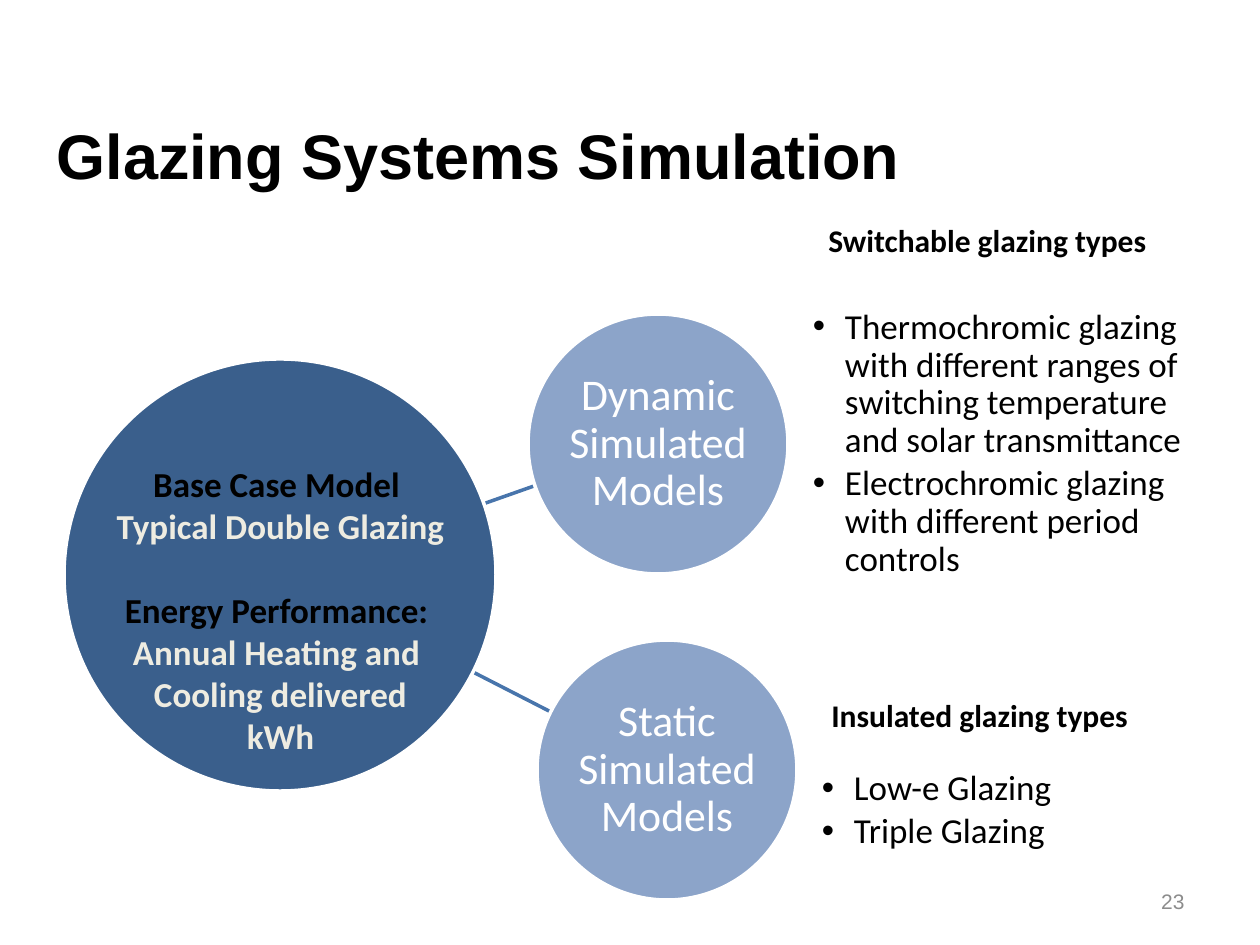
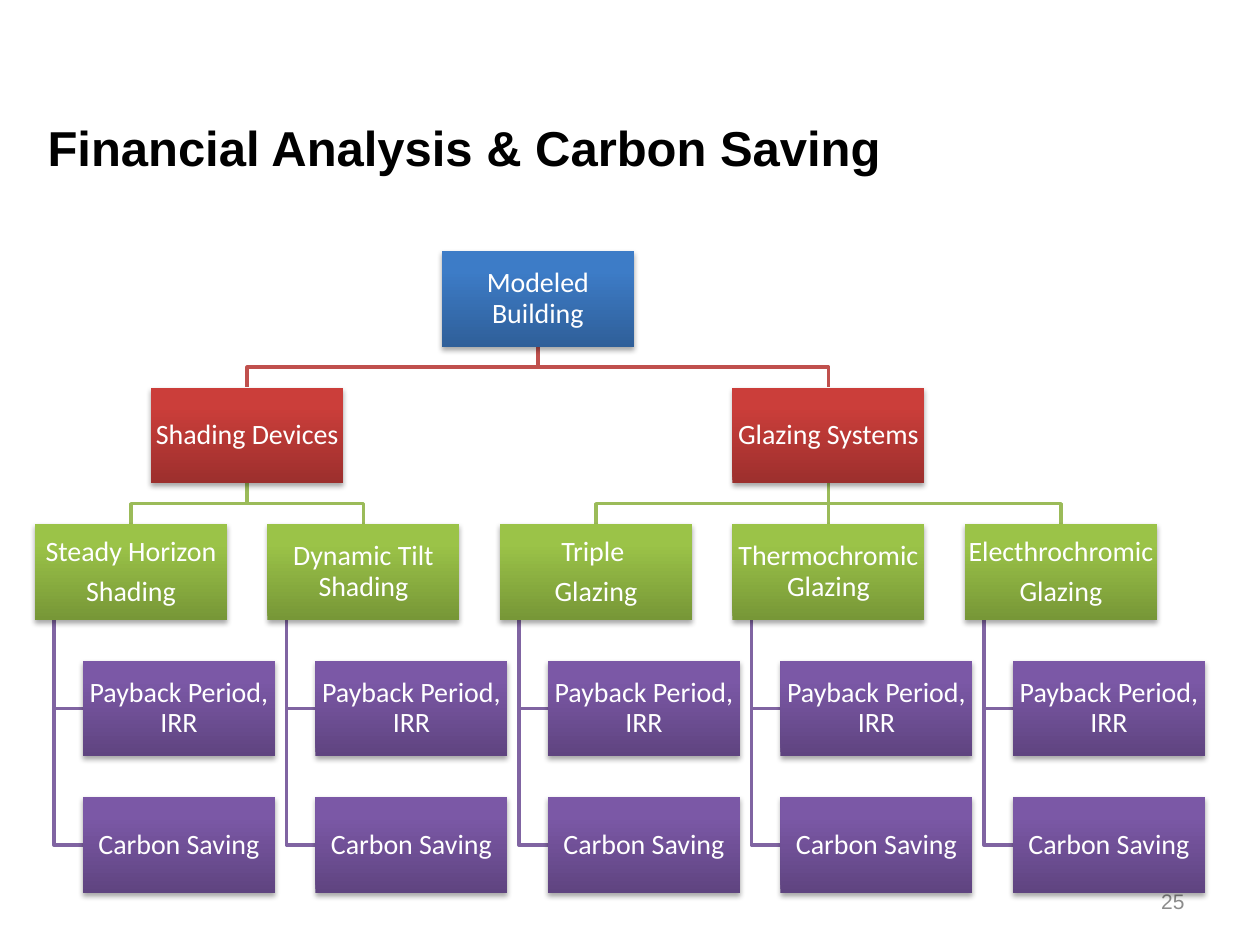
"""Builds two slides: glazing simulation models and the financial analysis tree."""
from dataclasses import dataclass

from pptx import Presentation
from pptx.dml.color import RGBColor
from pptx.enum.shapes import MSO_CONNECTOR, MSO_SHAPE
from pptx.enum.text import MSO_ANCHOR, MSO_AUTO_SIZE, PP_ALIGN
from pptx.oxml.ns import qn
from pptx.oxml.xmlchemy import OxmlElement
from pptx.util import Emu, Pt


@dataclass(frozen=True)
class Theme:
    head: str = "Arial"
    body: str = "Calibri"
    black: str = "000000"
    white: str = "FFFFFF"
    cream: str = "EEECE1"
    grey: str = "8C8C8C"
    base: str = "3A5F8C"
    model: str = "8CA4C9"
    spoke: str = "4875AC"
    line: int = 2
    title_size: int = 36
    subtitle_size: int = 28
    circle_size: int = 25
    list_size: int = 20
    heading_size: int = 18
    card_size: int = 16
    number_size: int = 12


T = Theme()
GRADIENTS = {
    "root": ("2F5F99", "3D7CC7"),
    "group": ("9C2F2D", "CB3E3A"),
    "option": ("779737", "9BC348"),
    "result": ("5F4480", "7B58A6"),
}
LINKS = {"group": "C0504D", "option": "9BBB59", "result": "8064A2"}

GLAZING = {
    "title": "Glazing Systems Simulation",
    "number": "23",
    "base": [
        ("Base Case Model ", {"color": T.black}),
        ("Typical Double Glazing", {}),
        ("Energy Performance: ", {"color": T.black, "before": 24}),
        ("Annual Heating and ", {}),
        ("Cooling delivered", {}),
        ("kWh", {}),
    ],
    "models": [
        {
            "name": "Dynamic Simulated Models",
            "circle": (528, 314, 260, 260),
            "spoke": [(432, 522), (534, 486)],
            "heading": ("Switchable glazing types", (816, 215, 367, 50)),
            "list": (813, 314, 388, 260),
            "types": [
                "Thermochromic glazing with different ranges of "
                "switching temperature and solar transmittance",
                "Electrochromic glazing with different period controls",
            ],
        },
        {
            "name": "Static Simulated Models",
            "circle": (537, 640, 260, 260),
            "spoke": [(432, 651), (551, 712)],
            "heading": ("Insulated glazing types", (819, 690, 338, 50)),
            "list": (822, 722, 388, 178),
            "types": ["Low-e Glazing", "Triple Glazing"],
        },
    ],
}
FINANCE = {
    "title": "Financial Analysis & Carbon Saving",
    "number": "25",
    "root": "Modeled Building",
    "groups": [
        ("Shading Devices", ["Steady Horizon\nShading", "Dynamic Tilt Shading"]),
        ("Glazing Systems", ["Triple \nGlazing", "Thermochromic Glazing",
                             "Electhrochromic \nGlazing"]),
    ],
    "results": ["Payback Period, IRR", "Carbon Saving"],
}

TITLE_BOX = (44, 105, 1111, 110)
SUBTITLE_BOX = (35, 106, 1111, 72)
NUMBER_BOX = (903, 876, 294, 50)
BASE_CIRCLE = (64, 359, 432, 432)
BASE_TEXT = (62, 456, 437, 310)
CARD_W, CARD_H = 192, 96
COL_PITCH = (965 - 35) / 4
ROW_PITCH = (797 - 251) / 4
TREE_LEFT, TREE_TOP = 35, 251
STEM, RESULT_INDENT = 19, 48
HANG = 32


def px(n):
    return Emu(round(n * 914400 / 126))


def rgb(color):
    return RGBColor.from_string(color)


def place(sp, box):
    sp.left, sp.top, sp.width, sp.height = map(px, box)


def write(sp, lines, size, color=T.black, font=T.body, bold=False,
          align=PP_ALIGN.LEFT, anchor=MSO_ANCHOR.TOP, inset=None,
          spacing=1.0, after=0, hang=0):
    tf = sp.text_frame
    tf.word_wrap = True
    tf.auto_size = MSO_AUTO_SIZE.NONE
    tf.vertical_anchor = anchor
    if inset is not None:
        tf.margin_left = tf.margin_top = tf.margin_right = tf.margin_bottom = px(inset)
    for i, line in enumerate(lines):
        text, own = line if isinstance(line, tuple) else (line, {})
        p = tf.paragraphs[0] if i == 0 else tf.add_paragraph()
        if hang:
            pPr = p._p.get_or_add_pPr()
            pPr.set("marL", str(px(hang)))
            pPr.set("indent", str(-px(hang)))
        p.alignment = align
        p.line_spacing = spacing
        p.space_before = Pt(own.get("before", 0))
        p.space_after = Pt(round(after * size, 1))
        r = p.add_run()
        r.text = text
        r.font.name, r.font.size, r.font.bold = font, Pt(size), bold
        r.font.color.rgb = rgb(own.get("color", color))


def text_box(slide, box, lines, size, **fmt):
    write(slide.shapes.add_textbox(*map(px, box)), lines, size, **fmt)


def frame(prs, layout, title, box, size, number):
    slide = prs.slides.add_slide(prs.slide_layouts[layout])
    place(slide.shapes.title, box)
    write(slide.shapes.title, [title], size, font=T.head, bold=True)
    slide.shapes.title.text_frame.margin_top = px(11)
    text_box(slide, NUMBER_BOX, [number], T.number_size, color=T.grey, font=T.head,
             align=PP_ALIGN.RIGHT, anchor=MSO_ANCHOR.MIDDLE)
    return slide


def link(slide, points, color):
    pts = [(px(x), px(y)) for x, y in points]
    if len(pts) == 2:
        sp = slide.shapes.add_connector(MSO_CONNECTOR.STRAIGHT, *pts[0], *pts[1])
    else:
        builder = slide.shapes.build_freeform(*pts[0])
        builder.add_line_segments(pts[1:], close=False)
        sp = builder.convert_to_shape()
        sp.fill.background()
    sp.line.color.rgb = rgb(color)
    sp.line.width = Pt(T.line)
    sp._element.spPr.append(OxmlElement("a:effectLst"))


def circle(slide, box, fill):
    sp = slide.shapes.add_shape(MSO_SHAPE.OVAL, *map(px, box))
    sp.shadow.inherit = False
    sp.fill.solid()
    sp.fill.fore_color.rgb = rgb(fill)
    sp.line.color.rgb = rgb(T.white)
    sp.line.width = Pt(T.line)
    return sp


def drop_shadow(sp):
    sp.shadow.inherit = False
    shadow = OxmlElement("a:outerShdw")
    for key, value in (("blurRad", Pt(3.1)), ("dist", Pt(1.8)), ("dir", 5400000),
                       ("rotWithShape", 0)):
        shadow.set(key, str(int(value)))
    clr, alpha = OxmlElement("a:srgbClr"), OxmlElement("a:alpha")
    clr.set("val", T.black)
    alpha.set("val", "35000")
    clr.append(alpha)
    shadow.append(clr)
    sp._element.spPr.find(qn("a:effectLst")).append(shadow)


def card(slide, x, y, text, kind):
    sp = slide.shapes.add_shape(MSO_SHAPE.RECTANGLE, *map(px, (x, y, CARD_W, CARD_H)))
    sp.fill.gradient()
    sp.fill.gradient_angle = 90
    for stop, color, position in zip(sp.fill.gradient_stops, GRADIENTS[kind], (0, 0.8)):
        stop.color.rgb = rgb(color)
        stop.position = position
    sp.line.fill.background()
    drop_shadow(sp)
    write(sp, text.split("\n"), T.card_size, color=T.white, align=PP_ALIGN.CENTER,
          anchor=MSO_ANCHOR.MIDDLE, inset=1, spacing=0.9, after=0.35)


def branch(slide, parent, child, kind):
    (x1, y1), (x2, y2) = parent, child
    x1, x2, y1 = x1 + CARD_W / 2, x2 + CARD_W / 2, y1 + CARD_H
    mid = (y1 + y2) / 2
    bend = [] if x1 == x2 else [(x1, mid), (x2, mid)]
    link(slide, [(x1, y1), *bend, (x2, y2)], LINKS[kind])


def hook(slide, parent, child):
    x, y = parent[0] + STEM, child[1] + CARD_H / 2
    link(slide, [(x, parent[1] + CARD_H), (x, y), (child[0], y)], LINKS["result"])


def glazing_slide(prs):
    slide = frame(prs, 3, GLAZING["title"], TITLE_BOX, T.title_size, GLAZING["number"])
    for model in GLAZING["models"]:
        link(slide, model["spoke"], T.spoke)
    circle(slide, BASE_CIRCLE, T.base)
    text_box(slide, BASE_TEXT, GLAZING["base"], T.list_size, color=T.cream, bold=True,
             align=PP_ALIGN.CENTER)
    for idx, model in enumerate(GLAZING["models"], 1):
        write(circle(slide, model["circle"], T.model), [model["name"]], T.circle_size,
              color=T.white, align=PP_ALIGN.CENTER, anchor=MSO_ANCHOR.MIDDLE,
              inset=2, spacing=0.9)
        body = slide.placeholders[idx]
        place(body, model["list"])
        write(body, model["types"], T.list_size, anchor=MSO_ANCHOR.MIDDLE, inset=0,
              spacing=0.9, after=0.15, hang=HANG)
        heading, box = model["heading"]
        text_box(slide, box, [heading], T.heading_size, bold=True)


def middle(cards):
    return (cards[0][0] + cards[-1][0]) / 2


def finance_slide(prs):
    slide = frame(prs, 5, FINANCE["title"], SUBTITLE_BOX, T.subtitle_size,
                  FINANCE["number"])
    rows = [TREE_TOP + i * ROW_PITCH for i in range(5)]
    cards, groups, col = [], [], 0
    for group, names in FINANCE["groups"]:
        options = [(TREE_LEFT + (col + i) * COL_PITCH, rows[2]) for i in range(len(names))]
        col += len(names)
        head = (middle(options), rows[1])
        groups.append(head)
        cards.append((*head, group, "group"))
        for option, name in zip(options, names):
            branch(slide, head, option, "option")
            cards.append((*option, name, "option"))
            for y, text in zip(rows[3:], FINANCE["results"]):
                result = (option[0] + RESULT_INDENT, y)
                hook(slide, option, result)
                cards.append((*result, text, "result"))
    root = (middle(groups), rows[0])
    for head in groups:
        branch(slide, root, head, "group")
    for item in [(*root, FINANCE["root"], "root"), *cards]:
        card(slide, *item)


def main():
    prs = Presentation()
    prs.slide_width, prs.slide_height = px(1260), px(945)
    glazing_slide(prs)
    finance_slide(prs)
    prs.save("out.pptx")


if __name__ == "__main__":
    main()
